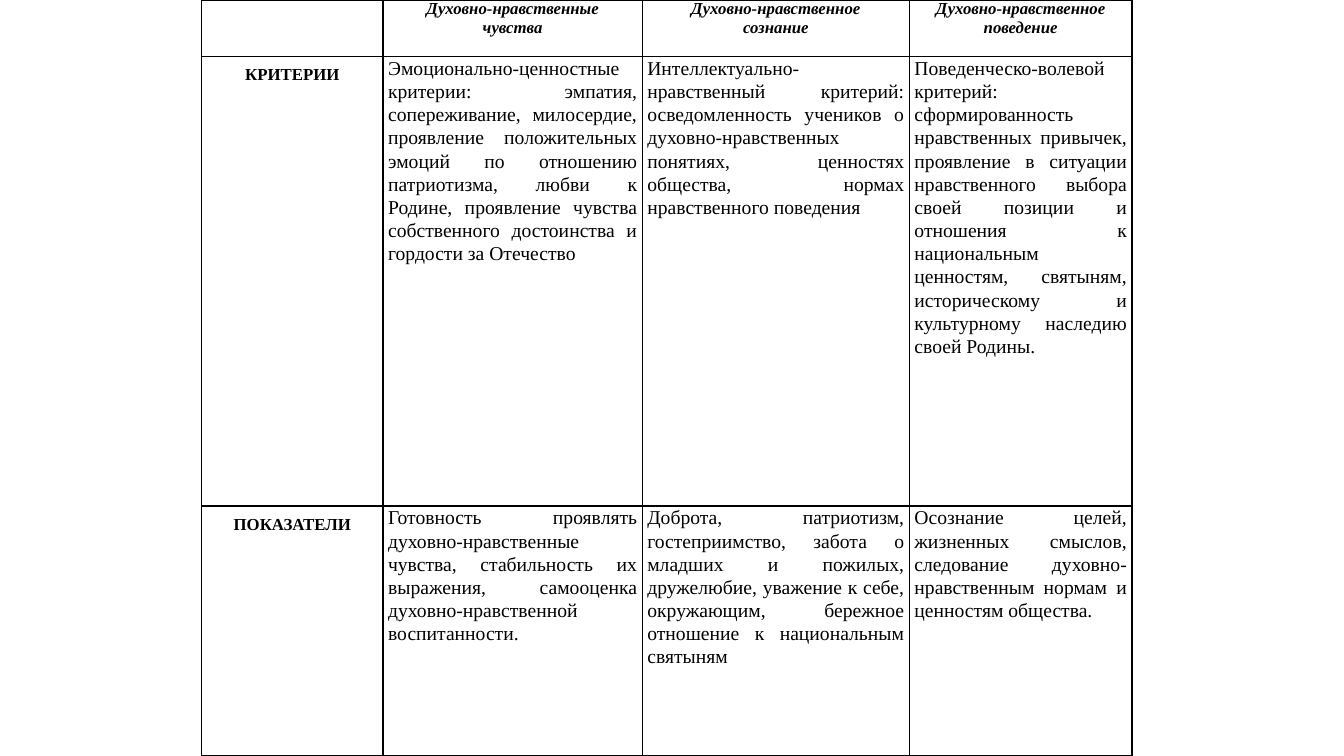
from lxml.etree import SubElement
from pptx import Presentation
from pptx.dml.color import RGBColor
from pptx.enum.text import PP_ALIGN
from pptx.oxml.ns import qn
from pptx.util import Pt

BLACK = RGBColor(0, 0, 0)
FONT = "Times New Roman"
COL_WIDTHS = [129.6, 185.2, 190.8, 159]
ROW_HEIGHTS = [40.3, 321.1, 178.6]

HEADERS = [
    ["Духовно-нравственные", "чувства"],
    ["Духовно-нравственное", "сознание"],
    ["Духовно-нравственное", "поведение"],
]
ROWS = [
    ("КРИТЕРИИ", [
        "Эмоционально-ценностные критерии: эмпатия, сопереживание, милосердие, "
        "проявление положительных эмоций по отношению патриотизма, любви к Родине, "
        "проявление чувства собственного достоинства и гордости за Отечество",
        "Интеллектуально-нравственный критерий: осведомленность учеников о "
        "духовно-нравственных понятиях, ценностях общества, нормах "
        "нравственного поведения",
        "Поведенческо-волевой критерий: сформированность нравственных привычек, "
        "проявление в ситуации нравственного выбора своей позиции и отношения к "
        "национальным ценностям, святыням, историческому и культурному наследию "
        "своей Родины.",
    ]),
    ("ПОКАЗАТЕЛИ", [
        "Готовность проявлять духовно-нравственные чувства, стабильность их "
        "выражения, самооценка духовно-нравственной воспитанности.",
        "Доброта, патриотизм, гостеприимство, забота о младших и пожилых, "
        "дружелюбие, уважение к себе, окружающим, бережное отношение к "
        "национальным святыням",
        "Осознание целей, жизненных смыслов, следование духовно-нравственным "
        "нормам и ценностям общества.",
    ]),
]


def style_cell(cell):
    """Give the cell thin black borders, no fill and narrow margins."""
    tcPr = cell._tc.get_or_add_tcPr()
    for side in ("a:lnL", "a:lnR", "a:lnT", "a:lnB"):
        ln = SubElement(tcPr, qn(side), w=str(Pt(1)))
        fill = SubElement(ln, qn("a:solidFill"))
        SubElement(fill, qn("a:srgbClr"), val=str(BLACK))
    cell.fill.background()
    cell.margin_left = cell.margin_right = Pt(3.6)
    cell.margin_top = cell.margin_bottom = 0


def write_cell(cell, lines, size=12, align=PP_ALIGN.CENTER, spacing=None,
               bold=True, italic=False):
    tf = cell.text_frame
    for i, line in enumerate(lines):
        p = tf.add_paragraph() if i else tf.paragraphs[0]
        p.alignment = align
        p.line_spacing = spacing
        r = p.add_run()
        r.text = line
        r.font.name = FONT
        r.font.size = Pt(size)
        r.font.bold = bold
        r.font.italic = italic
        r.font.color.rgb = BLACK


def add_criteria_table(s, left, top, col_widths, row_heights):
    frame = s.shapes.add_table(len(row_heights), len(col_widths), Pt(left), Pt(top),
                               Pt(sum(col_widths)), Pt(sum(row_heights)))
    table = frame.table
    table.horz_banding = False
    for column, width in zip(table.columns, col_widths):
        column.width = Pt(width)
    for row, height in zip(table.rows, row_heights):
        row.height = Pt(height)
    for cell in table.iter_cells():
        style_cell(cell)

    for col, lines in enumerate(HEADERS, 1):
        write_cell(table.cell(0, col), lines, italic=True)
    for row, (label, texts) in enumerate(ROWS, 1):
        write_cell(table.cell(row, 0), [label], spacing=1.5)
        for col, text in enumerate(texts, 1):
            write_cell(table.cell(row, col), [text], size=14, bold=False,
                       align=PP_ALIGN.JUSTIFY, spacing=1.07)


def main():
    prs = Presentation()
    prs.slide_width, prs.slide_height = Pt(960), Pt(540)
    s = prs.slides.add_slide(prs.slide_layouts[6])
    add_criteria_table(s, 144, 0, COL_WIDTHS, ROW_HEIGHTS)
    prs.save("out.pptx")


if __name__ == "__main__":
    main()
